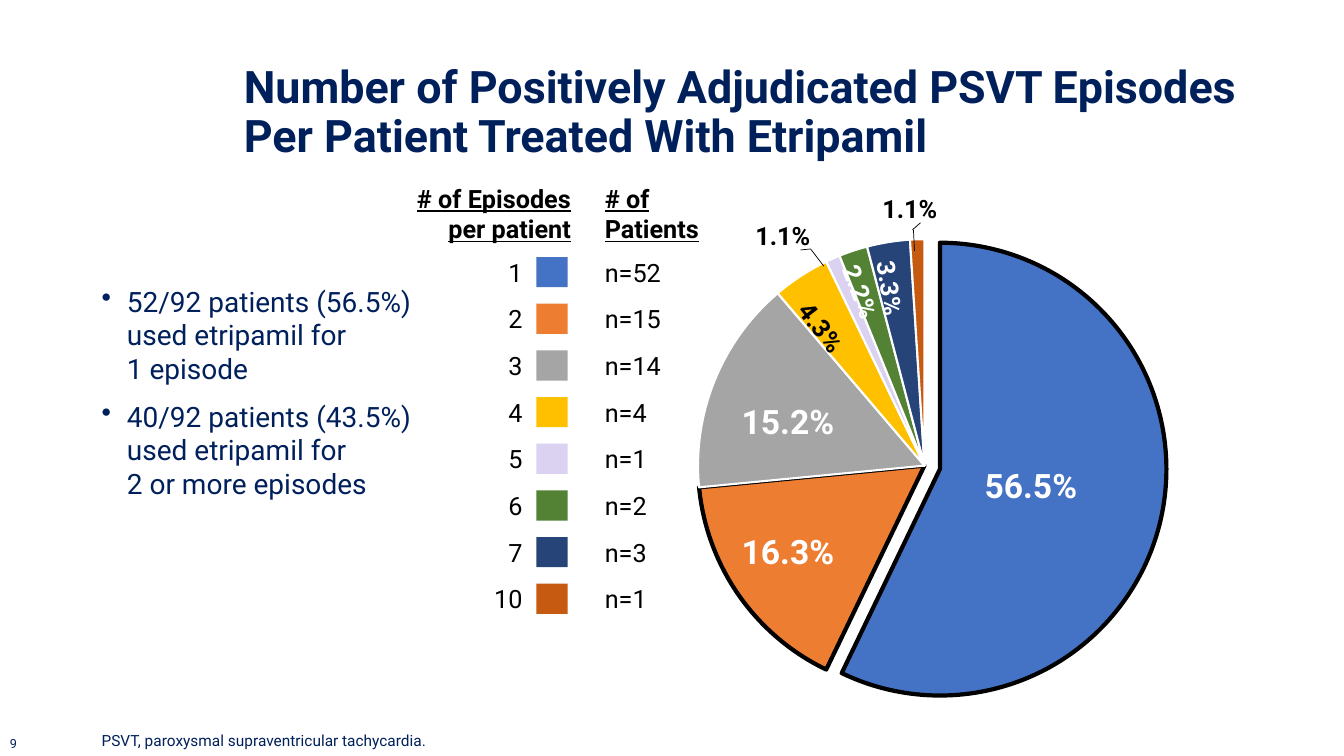
import pptx
import pptx.chart.data
import pptx.dml.color
import pptx.enum.chart
import pptx.enum.shapes
import pptx.enum.text
import pptx.oxml
import pptx.oxml.ns
import pptx.util
from pptx.util import Inches

COLORS = {
    "navy": "00205C", "black": "000000", "white": "FFFFFF",
    "blue": "4472C4", "orange": "ED7D31", "gray": "A5A5A5", "gold": "FFC000",
    "lilac": "DBD1F0", "green": "548235", "indigo": "264478", "brown": "9E480E",
    "charcoal": "636363", "rust": "C55A10", "teal": "255E91",
}
RGB = {name: pptx.dml.color.RGBColor.from_string(value) for name, value in COLORS.items()}
ALIGN = pptx.enum.text.PP_ALIGN
ANCHOR = pptx.enum.text.MSO_ANCHOR

deck = pptx.Presentation()
deck.slide_width = Inches(13.33)
deck.slide_height = Inches(7.5)
page = deck.slides.add_slide(deck.slide_layouts[6])


def add_text(text, left, top, width, height, size=18, color="black", bold=False,
             underline=False, align=ALIGN.LEFT, anchor=ANCHOR.TOP, rotation=0,
             wrap=True, spacing=1.0, bullet=False):
    box = page.shapes.add_textbox(Inches(left), Inches(top), Inches(width), Inches(height))
    box.rotation = rotation
    frame = box.text_frame
    frame.word_wrap = wrap
    frame.vertical_anchor = anchor
    for index, line in enumerate(text.split("\n")):
        para = frame.paragraphs[0] if index == 0 else frame.add_paragraph()
        para.text = line
        if bullet:
            properties = para._p.get_or_add_pPr()
            properties.set("marL", str(Inches(0.25)))
            properties.set("indent", str(Inches(-0.25)))
            mark = pptx.oxml.parse_xml(
                f'<a:buChar {pptx.oxml.ns.nsdecls("a")} char="•"/>')
            properties.append(mark)
        para.alignment = align
        para.line_spacing = spacing
        para.space_before = pptx.util.Pt(10 if index else 0)
        for span in para.runs:
            span.font.name = "Roboto"
            span.font.size = pptx.util.Pt(size)
            span.font.bold = bold
            span.font.underline = underline
            span.font.color.rgb = RGB[color]


add_text("Number of Positively Adjudicated PSVT Episodes Per Patient Treated With Etripamil",
         2.32, 0.4, 10.1, 1.45, size=32, color="navy", bold=True,
         anchor=ANCHOR.MIDDLE, spacing=0.9)
add_text("PSVT, paroxysmal supraventricular tachycardia.", 0.91, 7.02, 11.5, 0.47,
         size=11, color="navy", anchor=ANCHOR.BOTTOM)
add_text("52/92 patients (56.5%) used etripamil for \v1 episode\n"
         "40/92 patients (43.5%) used etripamil for \v2 or more episodes",
         0.91, 2.77, 3.41, 2.26, size=20, color="navy", bullet=True)

slice_colors = ["blue", "orange", "gray", "gold", "lilac", "green", "indigo",
                "brown", "charcoal", "rust", "teal"]
pie_data = pptx.chart.data.CategoryChartData()
pie_data.categories = [str(count) for count in range(1, 12)]
pie_data.add_series("Series 1", [56, 16, 15, 4, 1, 2, 3, 0, 0, 1, 0])
chart = page.shapes.add_chart(
    pptx.enum.chart.XL_CHART_TYPE.PIE, Inches(5.66), Inches(2.22),
    Inches(7.02), Inches(4.8), pie_data).chart
chart.has_title = False
chart.has_legend = False
chart.font.name = "Roboto"
chart.font.size = pptx.util.Pt(16)
chart.font.color.rgb = RGB["black"]
plot = chart.plots[0]
plot.vary_by_categories = True
for index, color in enumerate(slice_colors):
    point = plot.series[0].points[index]
    point.format.fill.solid()
    point.format.fill.fore_color.rgb = RGB[color]
    outlined = color in ("blue", "orange")
    point.format.line.color.rgb = RGB["black" if outlined else "white"]
    point.format.line.width = pptx.util.Pt(3 if outlined else 1.5)

chart_space = chart._chartSpace
blue_point = chart_space.xpath(".//c:dPt")[0]
blue_point.find(pptx.oxml.ns.qn("c:spPr")).addprevious(pptx.oxml.parse_xml(
    f'<c:explosion {pptx.oxml.ns.nsdecls("c")} val="7"/>'))
plot_area = chart_space.xpath(".//c:plotArea")[0]
for layout in plot_area.findall(pptx.oxml.ns.qn("c:layout")):
    plot_area.remove(layout)
plot_area.insert(0, pptx.oxml.parse_xml(
    f'<c:layout {pptx.oxml.ns.nsdecls("c")}><c:manualLayout>'
    '<c:layoutTarget val="inner"/><c:xMode val="edge"/><c:yMode val="edge"/>'
    '<c:x val="0.18"/><c:y val="0.03"/><c:w val="0.64"/><c:h val="0.94"/>'
    '</c:manualLayout></c:layout>'))

for text, left, top, color in [
    ("56.5%", 9.61, 4.56, "white"),
    ("16.3%", 7.2, 5.22, "white"),
    ("15.2%", 7.2, 3.93, "white"),
]:
    add_text(text, left, top, 1.23, 0.5, size=24, color=color, bold=True, align=ALIGN.CENTER)

for text, left, top, color, rotation, align in [
    ("4.3%", 7.68, 3.24, "black", 52.2, ALIGN.LEFT),
    ("2.2%", 8.01, 2.92, "white", 69.1, ALIGN.LEFT),
    ("3.3%", 8.25, 2.9, "white", 81.7, ALIGN.LEFT),
    ("1.1%", 7.15, 2.14, "black", 0, ALIGN.CENTER),
    ("1.1%", 8.41, 1.87, "black", 0, ALIGN.CENTER),
]:
    add_text(text, left, top, 1.23, 0.4, color=color, bold=True, rotation=rotation, align=align)

add_text("# of Episodes per patient", 3.87, 1.77, 1.89, 0.71, bold=True,
         underline=True, align=ALIGN.RIGHT)
add_text("# of Patients", 5.9, 1.77, 1.27, 0.71, bold=True, underline=True)
legend = [("1", 52, "blue"), ("2", 15, "orange"), ("3", 14, "gray"), ("4", 4, "gold"),
          ("5", 1, "lilac"), ("6", 2, "green"), ("7", 3, "indigo"), ("10", 1, "rust")]
for row, (episodes, patients, color) in enumerate(legend):
    top = 2.5 + row * 0.463
    swatch = page.shapes.add_shape(
        pptx.enum.shapes.MSO_SHAPE.RECTANGLE,
        Inches(5.32), Inches(top + 0.05), Inches(0.31), Inches(0.3))
    swatch.shadow.inherit = False
    swatch.fill.solid()
    swatch.fill.fore_color.rgb = RGB[color]
    swatch.line.fill.background()
    add_text(episodes, 4.77, top, 0.51, 0.4, align=ALIGN.RIGHT)
    add_text(f"n={patients}", 5.9, top, 0.92, 0.4)

for ends in [(8.17, 2.64, 8.04, 2.47), (7.94, 2.48, 8.04, 2.47),
             (9.07, 2.49, 9.06, 2.28), (9.13, 2.21, 9.05, 2.28)]:
    leader = page.shapes.add_connector(
        pptx.enum.shapes.MSO_CONNECTOR.STRAIGHT, *[Inches(end) for end in ends])
    leader.line.color.rgb = RGB["black"]
    leader.line.width = pptx.util.Pt(0.5)
    leader._element.spPr.append(pptx.oxml.parse_xml(
        f'<a:effectLst {pptx.oxml.ns.nsdecls("a")}/>'))

add_text("9", 0, 7.25, 0.27, 0.25, size=9, color="navy", wrap=False)

deck.save("out.pptx")
